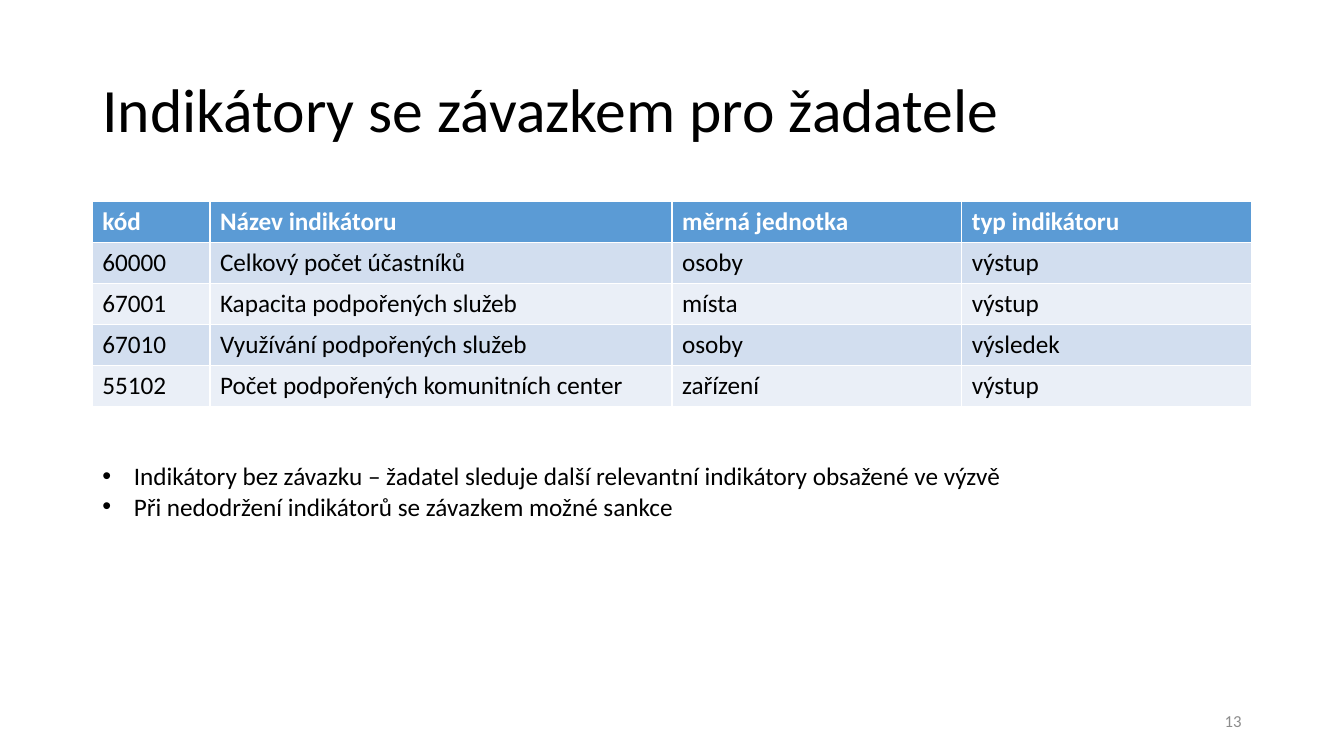
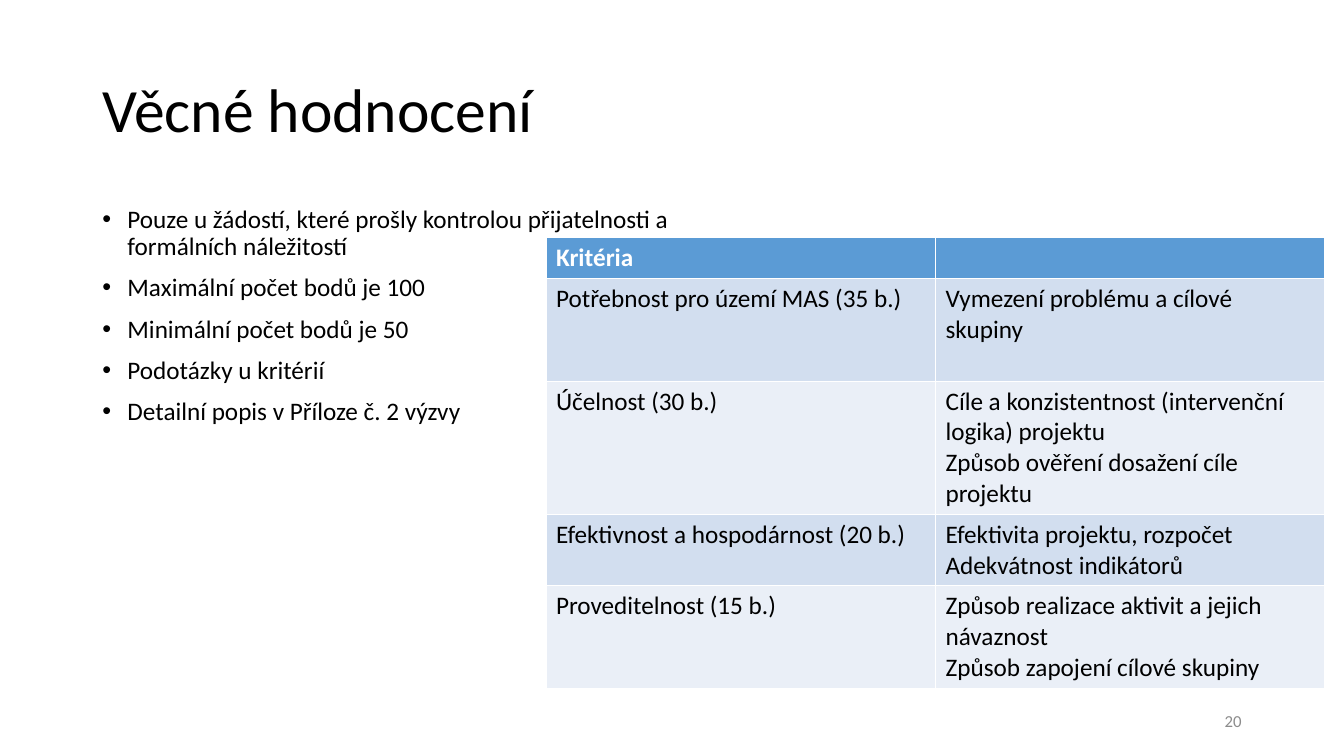
from dataclasses import dataclass

from lxml import etree
from pptx import Presentation
from pptx import util as u
from pptx.dml.color import RGBColor
from pptx.enum import text as t
from pptx.oxml import ns


@dataclass(frozen=True)
class Theme:
    font: str = "Calibri"
    ink: str = "000000"
    white: str = "FFFFFF"
    gray: str = "8C8C8C"
    head: str = "5B9BD5"
    bands: tuple = ("D2DEEF", "EAEFF7")
    title: int = 44
    body: int = 18
    page: int = 12
    lead: float = 0.9


THEME = Theme()
LEFT, WIDE = 88, 1104
ROW = 39

CODES = [
    ("kód", "Název indikátoru", "měrná jednotka", "typ indikátoru"),
    ("60000", "Celkový počet účastníků", "osoby", "výstup"),
    ("67001", "Kapacita podpořených služeb", "místa", "výstup"),
    ("67010", "Využívání podpořených služeb", "osoby", "výsledek"),
    ("55102", "Počet podpořených komunitních center", "zařízení", "výstup"),
]
NOTES = [
    "Indikátory bez závazku – žadatel sleduje další relevantní indikátory obsažené ve výzvě",
    "Při nedodržení indikátorů se závazkem možné sankce",
]
RULES = [
    "Pouze u žádostí, které prošly kontrolou přijatelnosti a formálních náležitostí",
    "Maximální počet bodů je 100",
    "Minimální počet bodů je 50",
    "Podotázky u kritérií",
    "Detailní popis v Příloze č. 2 výzvy",
]
CRITERIA = [
    ("Kritéria", ""),
    ("Potřebnost pro území MAS (35 b.)", "Vymezení problému a cílové skupiny"),
    ("Účelnost (30 b.)",
     "Cíle a konzistentnost (intervenční logika) projektu\n"
     "Způsob ověření dosažení cíle projektu"),
    ("Efektivnost a hospodárnost (20 b.)",
     "Efektivita projektu, rozpočet\nAdekvátnost indikátorů"),
    ("Proveditelnost (15 b.)",
     "Způsob realizace aktivit a jejich návaznost\n"
     "Způsob zapojení cílové skupiny"),
]


def px(n):
    return u.Emu(n * 9525)


def style(para, size, color=THEME.ink, bold=False):
    font = para.font
    font.name, font.size, font.bold = THEME.font, u.Pt(size), bold
    font.color.rgb = RGBColor.from_string(color)


def add_box(slide, x, y, w, h, lines):
    frame = slide.shapes.add_textbox(*map(px, (x, y, w, h))).text_frame
    frame.word_wrap = True
    frame.text = "\n".join(lines)
    return frame


def add_list(slide, x, y, w, h, lines, indent, lead=1.0, gap=0):
    for para in add_box(slide, x, y, w, h, lines).paragraphs:
        props = para._p.get_or_add_pPr()
        props.set("marL", str(px(indent)))
        props.set("indent", str(-px(indent)))
        etree.SubElement(props, ns.qn("a:buFont"), typeface="Arial")
        etree.SubElement(props, ns.qn("a:buChar"), char="•")
        para.line_spacing = lead
        para.space_before = u.Pt(gap)
        style(para, THEME.body)


def add_grid(slide, x, y, cols, rows, data):
    shape = slide.shapes.add_table(
        len(rows), len(cols), px(x), px(y), px(sum(cols)), px(sum(rows)))
    table = shape.table
    for col, width in zip(table.columns, cols):
        col.width = px(width)
    for i, (height, texts) in enumerate(zip(rows, data)):
        table.rows[i].height = px(height)
        top = i == 0
        fill = THEME.head if top else THEME.bands[(i - 1) % 2]
        for cell, words in zip(table.rows[i].cells, texts):
            cell.fill.solid()
            cell.fill.fore_color.rgb = RGBColor.from_string(fill)
            cell.text = words
            for para in cell.text_frame.paragraphs:
                style(para, THEME.body, THEME.white if top else THEME.ink, top)


def add_slide(deck, title, page):
    slide = deck.slides.add_slide(deck.slide_layouts[5])
    head = slide.shapes.title
    head.left, head.top, head.width, head.height = map(px, (LEFT, 38, WIDE, 139))
    head.text_frame.text = title
    head.text_frame.vertical_anchor = t.MSO_ANCHOR.MIDDLE
    para = head.text_frame.paragraphs[0]
    para.alignment = t.PP_ALIGN.LEFT
    para.line_spacing = THEME.lead
    style(para, THEME.title)

    foot = add_box(slide, 904, 667, 288, 38, [str(page)])
    foot.vertical_anchor = t.MSO_ANCHOR.MIDDLE
    foot.paragraphs[0].alignment = t.PP_ALIGN.RIGHT
    style(foot.paragraphs[0], THEME.page, THEME.gray)
    return slide


def main():
    deck = Presentation()
    deck.slide_width, deck.slide_height = px(1280), px(720)

    slide = add_slide(deck, "Indikátory se závazkem pro žadatele", 13)
    add_grid(slide, LEFT, 192, (112, 440, 276, 276), [ROW] * len(CODES), CODES)
    add_list(slide, LEFT, 434, WIDE, 68, NOTES, 30)

    slide = add_slide(deck, "Věcné hodnocení", 20)
    add_list(slide, LEFT, 192, 562, 457, RULES, 24, THEME.lead, 10)
    add_grid(slide, 520, 226, (371, 371), (ROW, 98, 127, 68, 98), CRITERIA)

    deck.save("out.pptx")


if __name__ == "__main__":
    main()
